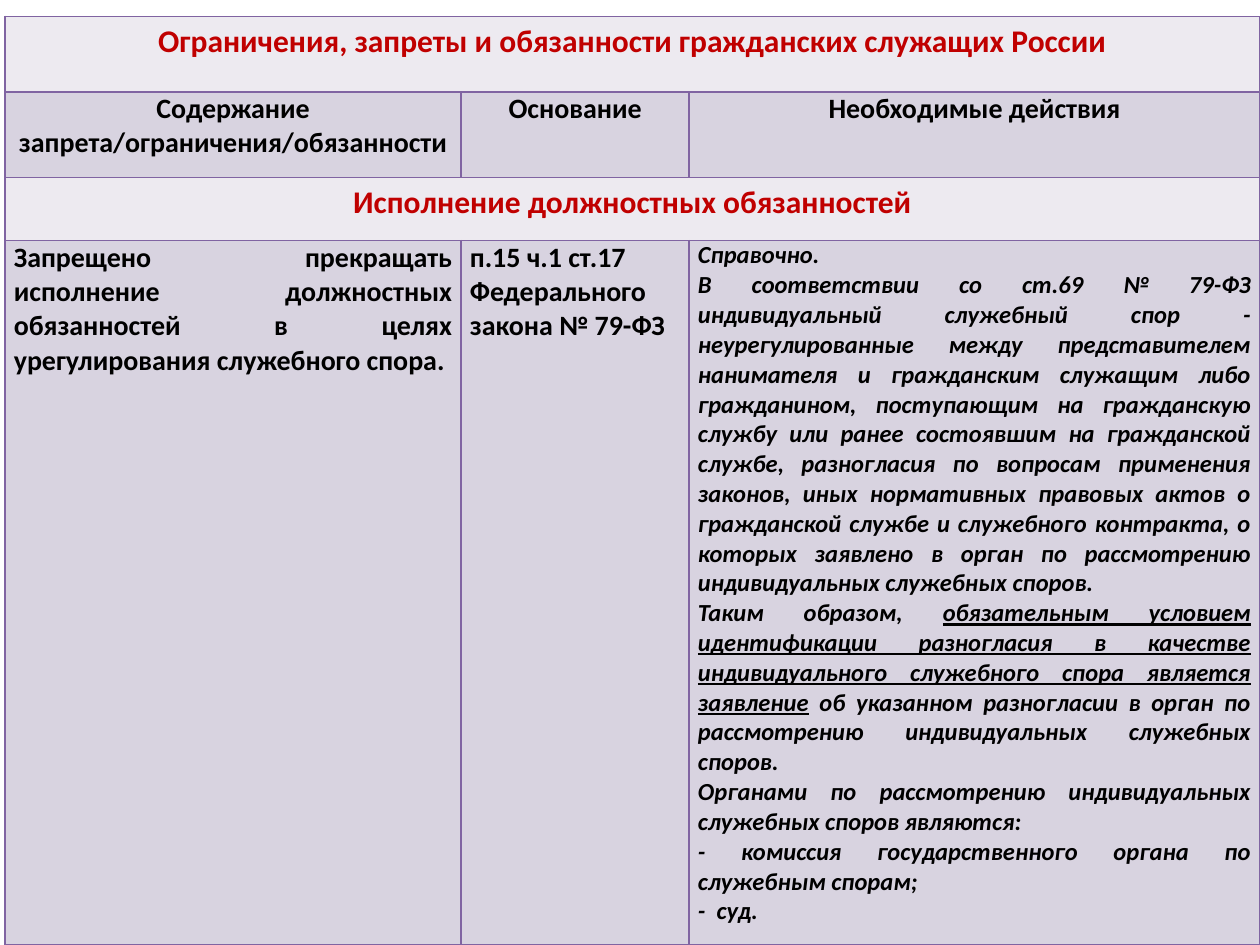
from dataclasses import dataclass

from lxml.etree import SubElement
from pptx import Presentation
from pptx.dml.color import RGBColor
from pptx.enum.text import PP_ALIGN as Align
from pptx.oxml.ns import qn
from pptx.util import Inches, Pt


@dataclass(frozen=True)
class Theme:
    font: str = "Calibri"
    accent: str = "C00000"
    ink: str = "000000"
    border: str = "8064A2"
    band: str = "EDEAF0"
    body: str = "D8D3E0"
    heading_size: int = 18
    text_size: int = 16
    note_size: int = 14
    border_width: int = 1


THEME = Theme()
COLUMN_WIDTHS = (3.62, 1.81, 4.53)
ROW_HEIGHTS = (0.6, 0.68, 0.5, 5.59)

TITLE = "Ограничения, запреты и обязанности гражданских служащих России"
SECTION = "Исполнение должностных обязанностей"
HEADERS = (
    "Содержание запрета/ограничения/обязанности",
    "Основание",
    "Необходимые действия",
)
RULE = (
    "Запрещено  прекращать исполнение должностных обязанностей "
    "в целях урегулирования служебного спора."
)
BASIS = "п.15 ч.1 ст.17 Федерального закона № 79-ФЗ"
UNDERLINED = (
    "обязательным условием идентификации разногласия в качестве "
    "индивидуального служебного спора является заявление"
)
NOTES = (
    ("Справочно.",),
    (
        "В соответствии со ст.69 № 79-ФЗ индивидуальный служебный спор - "
        "неурегулированные между представителем нанимателя и гражданским "
        "служащим либо гражданином, поступающим на гражданскую службу или "
        "ранее состоявшим на гражданской службе, разногласия по вопросам "
        "применения законов, иных нормативных правовых актов о гражданской "
        "службе и служебного контракта, о которых заявлено в орган по "
        "рассмотрению индивидуальных служебных споров.",
    ),
    (
        "Таким образом, ",
        UNDERLINED,
        " об указанном разногласии в орган по рассмотрению "
        "индивидуальных служебных споров.",
    ),
    ("Органами по рассмотрению индивидуальных служебных споров являются:",),
    ("- комиссия государственного органа по служебным спорам;",),
    ("-  суд.",),
)


def add_borders(cell):
    properties = cell._tc.get_or_add_tcPr()
    for position, side in enumerate(("lnL", "lnR", "lnT", "lnB")):
        line = properties.makeelement(
            qn(f"a:{side}"), {"w": str(Pt(THEME.border_width))}
        )
        fill = SubElement(line, qn("a:solidFill"))
        SubElement(fill, qn("a:srgbClr"), val=THEME.border)
        properties.insert(position, line)


def style_cell(cell, fill):
    cell.fill.solid()
    cell.fill.fore_color.rgb = RGBColor.from_string(fill)
    add_borders(cell)


def write_cell(cell, paragraphs, size, color, align, italic=False):
    frame = cell.text_frame
    for index, spans in enumerate(paragraphs):
        para = frame.add_paragraph() if index else frame.paragraphs[0]
        para.alignment = align
        font = para.font
        font.name, font.size = THEME.font, Pt(size)
        font.bold, font.italic = True, italic
        font.color.rgb = RGBColor.from_string(color)
        for text in spans:
            span = para.add_run()
            span.text = text
            if text == UNDERLINED:
                span.font.underline = True


def write_band(table, row, text):
    first = table.cell(row, 0)
    first.merge(table.cell(row, len(COLUMN_WIDTHS) - 1))
    for cell in table.rows[row].cells:
        style_cell(cell, THEME.band)
    write_cell(first, [[text]], THEME.heading_size, THEME.accent, Align.CENTER)


def write_body_cell(cell, paragraphs, size, align, italic=False):
    style_cell(cell, THEME.body)
    cell.margin_left = cell.margin_right = Inches(0.07)
    cell.margin_top = cell.margin_bottom = 0
    write_cell(cell, paragraphs, size, THEME.ink, align, italic)


def add_duties_table(page):
    frame = page.shapes.add_table(
        len(ROW_HEIGHTS),
        len(COLUMN_WIDTHS),
        Inches(0.04),
        Inches(0.13),
        Inches(sum(COLUMN_WIDTHS)),
        Inches(sum(ROW_HEIGHTS)),
    )
    table = frame.table
    table.first_row = table.horz_banding = False
    for column, width in zip(table.columns, COLUMN_WIDTHS):
        column.width = Inches(width)
    for row, height in zip(table.rows, ROW_HEIGHTS):
        row.height = Inches(height)
    return table


def main():
    deck = Presentation()
    deck.slide_width, deck.slide_height = Inches(10), Inches(7.5)
    page = deck.slides.add_slide(deck.slide_layouts[6])
    table = add_duties_table(page)

    write_band(table, 0, TITLE)
    for column, header in enumerate(HEADERS):
        write_body_cell(
            table.cell(1, column), [[header]], THEME.text_size, Align.CENTER
        )
    write_band(table, 2, SECTION)
    write_body_cell(table.cell(3, 0), [[RULE]], THEME.text_size, Align.JUSTIFY)
    write_body_cell(table.cell(3, 1), [[BASIS]], THEME.text_size, Align.LEFT)
    write_body_cell(
        table.cell(3, 2), NOTES, THEME.note_size, Align.JUSTIFY, italic=True
    )
    deck.save("out.pptx")


if __name__ == "__main__":
    main()
